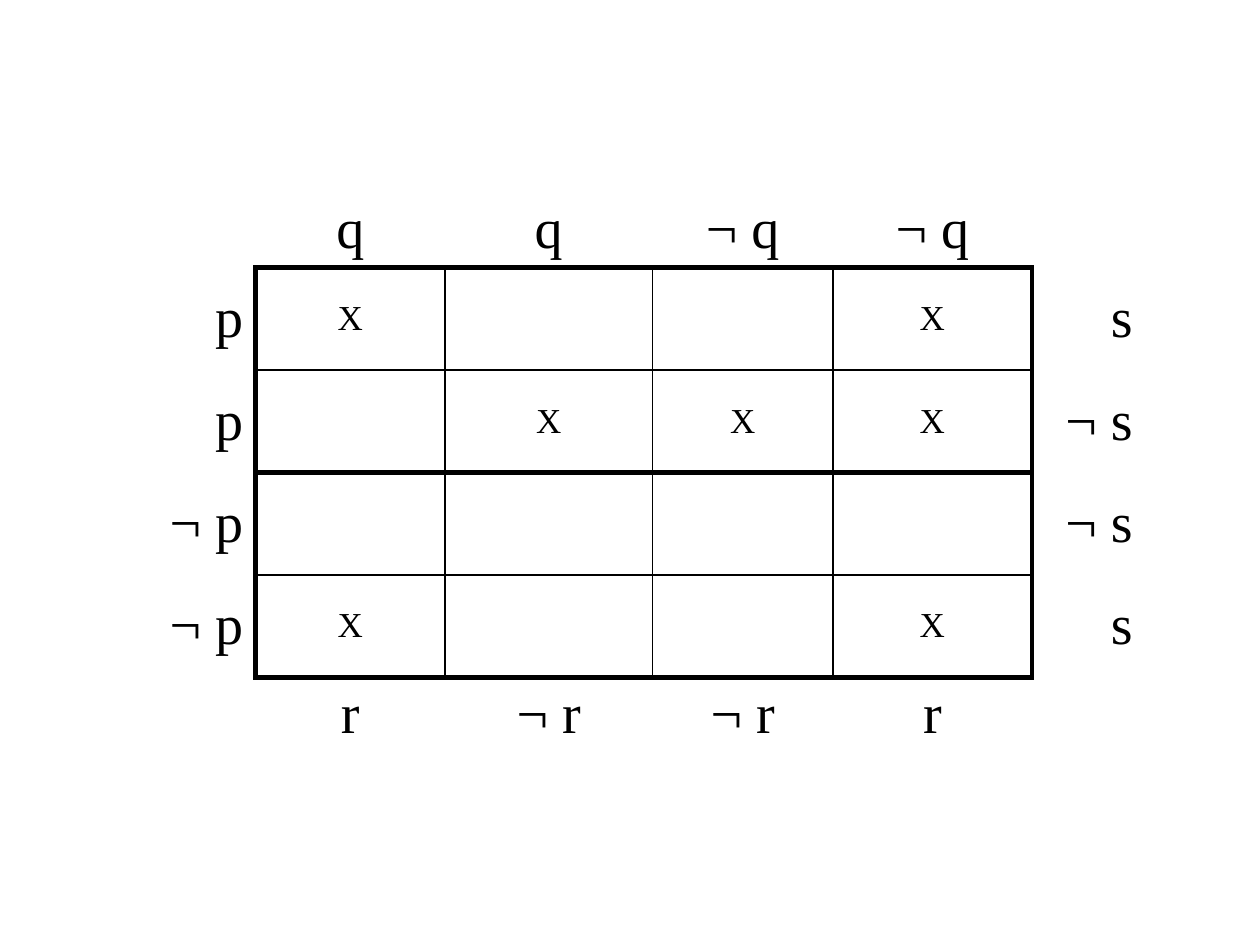
"""Build a Karnaugh map of p, q, r and s as one table."""
from dataclasses import dataclass

from lxml.etree import SubElement
from pptx import Presentation
from pptx.dml.color import RGBColor
from pptx.enum.text import MSO_ANCHOR as Anchor, PP_ALIGN as Align
from pptx.oxml.ns import qn
from pptx.table import Table, _Cell as Cell
from pptx.util import Inches, Pt

FONT = "Times New Roman"
INK = "000000"
COLUMN_WIDTHS = (1.13, 1.5, 1.65, 1.43, 1.58, 0.9)
ROW_HEIGHT = 0.8133
GRID = (
    ("", "q", "q", "¬ q", "¬ q", ""),
    ("p", "X", "", "", "X", "s"),
    ("p", "", "X", "X", "X", "¬ s"),
    ("¬ p", "", "", "", "", "¬ s"),
    ("¬ p", "X", "", "", "X", "s"),
    ("", "r", "¬ r", "¬ r", "r", ""),
)
MAP_INDEXES = range(1, 5)
HEAVY_ROW_EDGES = (1, 3, 5)
HEAVY_COLUMN_EDGES = (1, 5)


@dataclass(frozen=True)
class LabelStyle:
    size: int
    align: Align
    anchor: Anchor


MARK = LabelStyle(20, Align.CENTER, Anchor.MIDDLE)
SIDE = LabelStyle(32, Align.RIGHT, Anchor.MIDDLE)
TOP = LabelStyle(32, Align.CENTER, Anchor.BOTTOM)
BOTTOM = LabelStyle(32, Align.CENTER, Anchor.TOP)


def color(value: str) -> RGBColor:
    return RGBColor.from_string(value)


def label_style(row: int, column: int) -> LabelStyle:
    if column not in MAP_INDEXES:
        return SIDE
    if row not in MAP_INDEXES:
        return TOP if row == 0 else BOTTOM
    return MARK


def edge_width(edge: int, crossing: int, heavy_edges: tuple[int, ...]) -> int:
    if crossing not in MAP_INDEXES or not 1 <= edge <= 5:
        return 0
    return 3 if edge in heavy_edges else 1


def add_border(cell: Cell, side: str, width: int) -> None:
    properties = cell._tc.get_or_add_tcPr()
    line = SubElement(properties, qn(f"a:ln{side}"), w=str(Pt(width)))
    if width:
        fill = SubElement(line, qn("a:solidFill"))
        SubElement(fill, qn("a:srgbClr"), val=INK)
    else:
        SubElement(line, qn("a:noFill"))


def format_cell(table: Table, row: int, column: int) -> None:
    cell = table.cell(row, column)
    style = label_style(row, column)
    for side, edge in (("L", column), ("R", column + 1)):
        add_border(cell, side, edge_width(edge, row, HEAVY_COLUMN_EDGES))
    for side, edge in (("T", row), ("B", row + 1)):
        add_border(cell, side, edge_width(edge, column, HEAVY_ROW_EDGES))
    cell.fill.background()
    cell.vertical_anchor = style.anchor
    cell.text = GRID[row][column]
    paragraph = cell.text_frame.paragraphs[0]
    paragraph.alignment = style.align
    paragraph.space_before = Pt(style.size * 0.2)
    paragraph.font.name = FONT
    paragraph.font.size = Pt(style.size)
    paragraph.font.color.rgb = color(INK)


def main() -> None:
    presentation = Presentation()
    presentation.slide_width, presentation.slide_height = Inches(10), Inches(7.5)
    slide = presentation.slides.add_slide(presentation.slide_layouts[6])
    table = slide.shapes.add_table(
        len(GRID), len(COLUMN_WIDTHS), Inches(0.9), Inches(1.31),
        Inches(sum(COLUMN_WIDTHS)), Inches(ROW_HEIGHT * len(GRID)),
    ).table
    table.first_row = table.horz_banding = False
    for column, width in zip(table.columns, COLUMN_WIDTHS):
        column.width = Inches(width)
    for row in range(len(GRID)):
        for column in range(len(COLUMN_WIDTHS)):
            format_cell(table, row, column)
    presentation.save("out.pptx")


if __name__ == "__main__":
    main()
